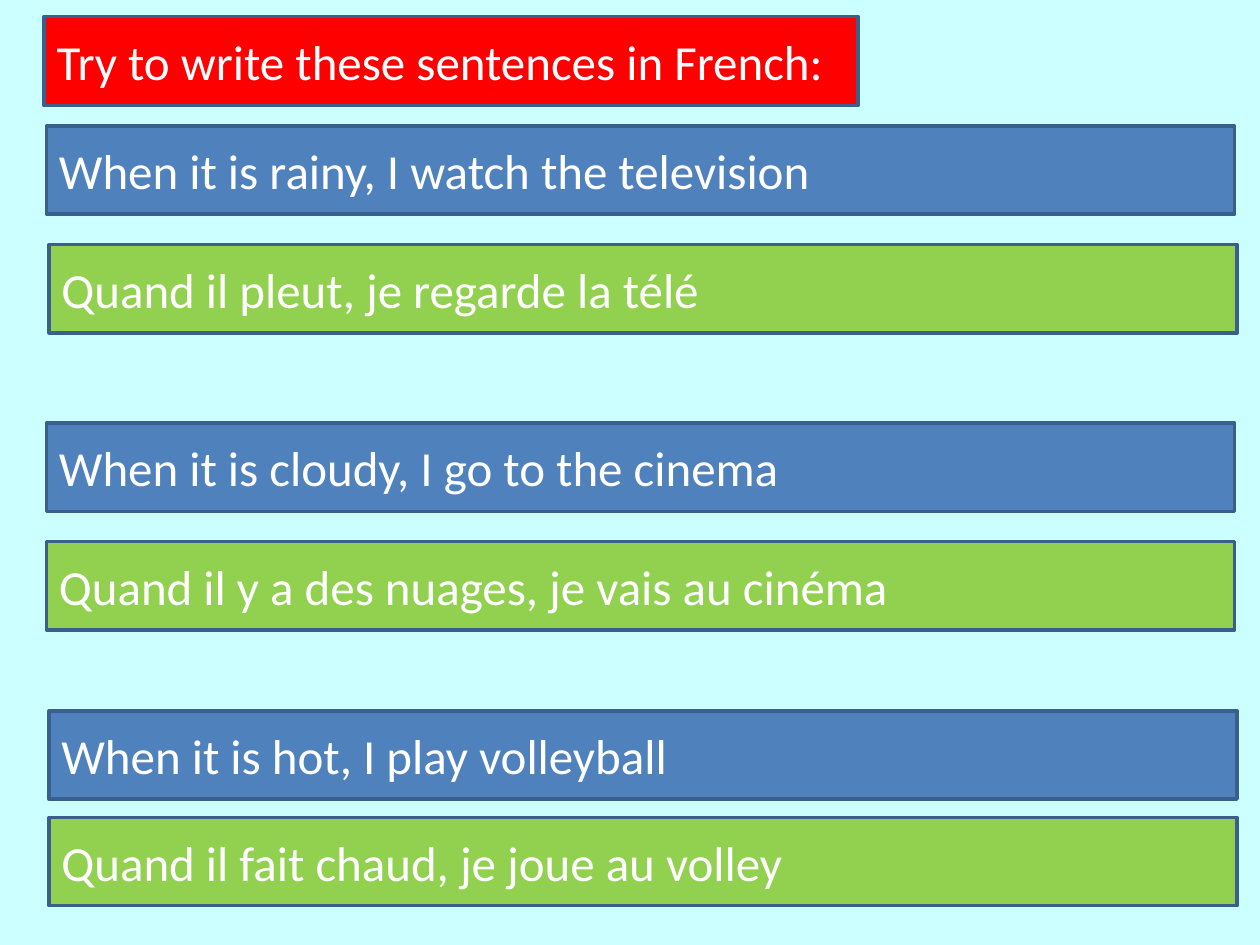
from pptx import Presentation
from pptx import util as u
from pptx.dml.color import RGBColor
from pptx.enum import shapes, text

RED, BLUE, GREEN = "FF0000", "4F81BD", "92D050"
BAR_WIDTH, BAR_HEIGHT = 23.95, 1.78

# English sentence and French answer, each with its left and top in cm
SENTENCES = [
    (("When it is rainy, I watch the television", 0.94, 2.54),
     ("Quand il pleut, je regarde la télé", 0.99, 4.93)),
    (("When it is cloudy, I go to the cinema", 0.94, 8.53),
     ("Quand il y a des nuages, je vais au cinéma", 0.94, 10.92)),
    (("When it is hot, I play volleyball", 0.99, 14.33),
     ("Quand il fait chaud, je joue au volley", 0.99, 16.48)),
]


def rgb(value):
    return RGBColor.from_string(value)


def write(shape, words, size=28, color="FFFFFF", font="Calibri"):
    frame = shape.text_frame
    frame.word_wrap = True
    frame.auto_size = text.MSO_AUTO_SIZE.NONE
    frame.vertical_anchor = text.MSO_ANCHOR.MIDDLE
    paragraph = frame.paragraphs[0]
    paragraph.alignment = text.PP_ALIGN.LEFT
    run = paragraph.add_run()
    run.text = words
    run.font.size = u.Pt(size)
    run.font.name = font
    run.font.color.rgb = rgb(color)


class SentenceSlide:
    border, border_width = "3A5F8C", 2

    def __init__(self, deck, background):
        self.slide = deck.slides.add_slide(deck.slide_layouts[5])
        fill = self.slide.background.fill
        fill.solid()
        fill.fore_color.rgb = rgb(background)

    def paint(self, shape, color):
        shape.fill.solid()
        shape.fill.fore_color.rgb = rgb(color)
        shape.line.color.rgb = rgb(self.border)
        shape.line.width = u.Pt(self.border_width)

    def title(self, words, left, top, width, height, color):
        heading = self.slide.shapes.title
        heading.left, heading.top = u.Cm(left), u.Cm(top)
        heading.width, heading.height = u.Cm(width), u.Cm(height)
        self.paint(heading, color)
        write(heading, words)

    def bar(self, words, left, top, color):
        sentence = self.slide.shapes.add_shape(
            shapes.MSO_SHAPE.RECTANGLE, u.Cm(left), u.Cm(top),
            u.Cm(BAR_WIDTH), u.Cm(BAR_HEIGHT))
        sentence.shadow.inherit = False
        self.paint(sentence, color)
        write(sentence, words)


def main():
    deck = Presentation()
    deck.slide_width, deck.slide_height = u.Cm(25.4), u.Cm(19.05)
    page = SentenceSlide(deck, "CCFFFF")

    # Instruction
    page.title("Try to write these sentences in French:",
               0.89, 0.33, 16.41, 1.8, RED)

    # Sentences with their translations
    for english, french in SENTENCES:
        page.bar(*english, BLUE)
        page.bar(*french, GREEN)

    deck.save("out.pptx")


if __name__ == "__main__":
    main()
